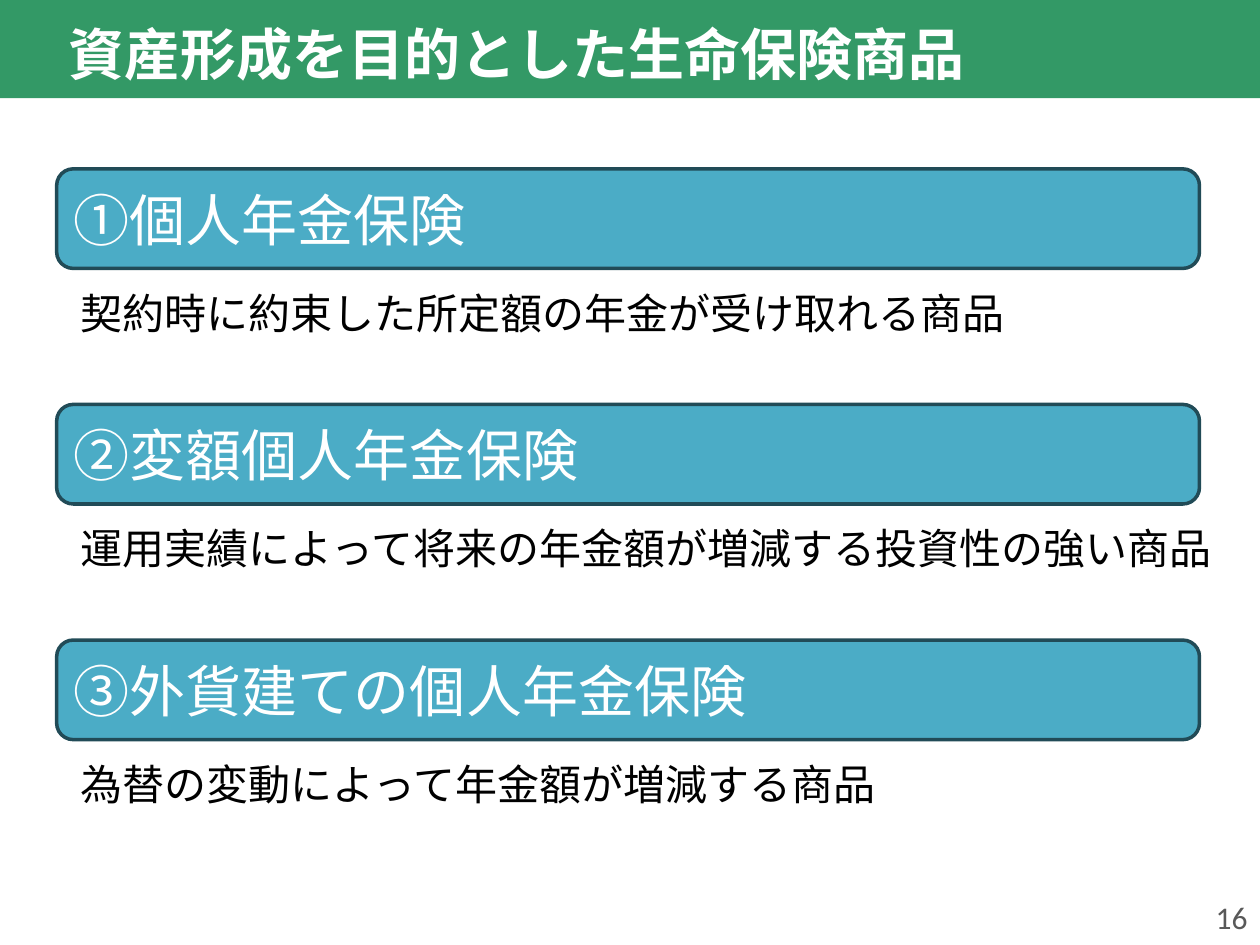
from lxml import etree
from pptx import Presentation
from pptx import util as u
from pptx.dml.color import RGBColor
from pptx.enum import shapes, text
from pptx.oxml.ns import qn

COLORS = {
    "header": "339966",
    "bar": "4BACC6",
    "outline": "214B57",
    "white": "FFFFFF",
    "black": "000000",
    "grey": "595959",
}
JP_FONT = "Noto Sans CJK JP"
PRODUCTS = [
    ("①個人年金保険", "契約時に約束した所定額の年金が受け取れる商品"),
    ("②変額個人年金保険", "運用実績によって将来の年金額が増減する投資性の強い商品"),
    ("③外貨建ての個人年金保険", "為替の変動によって年金額が増減する商品"),
]


def rgb(name):
    """Return the named palette colour."""
    return RGBColor.from_string(COLORS[name])


def place(sp, left, top, width, height):
    """Move and size a shape, in inches."""
    sp.left, sp.top = u.Inches(left), u.Inches(top)
    sp.width, sp.height = u.Inches(width), u.Inches(height)


def write(sp, content, size, color, font=JP_FONT, bold=False,
          align=text.PP_ALIGN.LEFT, anchor=text.MSO_ANCHOR.MIDDLE,
          fit=text.MSO_AUTO_SIZE.NONE, wrap=True):
    """Put one formatted paragraph into a shape."""
    tf = sp.text_frame
    tf.word_wrap, tf.auto_size, tf.vertical_anchor = wrap, fit, anchor
    p = tf.paragraphs[0]
    p.alignment = align
    r = p.add_run()
    r.text = content
    r.font.size, r.font.bold, r.font.name = u.Pt(size), bold, font
    r.font.color.rgb = rgb(color)
    etree.SubElement(r.font._element, qn("a:ea"), typeface=font)


def add_header(s, content, left, top, width, height):
    """Turn the title placeholder into the header band."""
    sp = s.shapes.title
    place(sp, left, top, width, height)
    sp.fill.solid()
    sp.fill.fore_color.rgb = rgb("header")
    write(sp, content, 32, "white", bold=True)
    tf = sp.text_frame
    tf.margin_left, tf.margin_right = u.Inches(0.54), u.Inches(0.1)
    tf.margin_top, tf.margin_bottom = u.Inches(0.12), u.Inches(0.05)


def add_product(s, name, description, left, top, width, height):
    """Add a product bar with its description below."""
    sp = s.shapes.add_shape(shapes.MSO_SHAPE.ROUNDED_RECTANGLE, 0, 0, 0, 0)
    place(sp, left, top, width, height)
    sp.shadow.inherit = False
    sp.fill.solid()
    sp.fill.fore_color.rgb = rgb("bar")
    sp.line.color.rgb = rgb("outline")
    sp.line.width = u.Pt(2)
    write(sp, name, 32, "white")
    box = s.shapes.add_textbox(0, 0, 0, 0)
    place(box, left + 0.09, top + height + 0.1, width + 0.84, 0.5)
    write(box, description, 24, "black", anchor=text.MSO_ANCHOR.TOP,
          fit=text.MSO_AUTO_SIZE.SHAPE_TO_FIT_TEXT)


def add_page_number(s, number, left, top, width, height):
    """Add the page number at the right edge of its box."""
    box = s.shapes.add_textbox(0, 0, 0, 0)
    place(box, left, top, width, height)
    write(box, number, 18, "grey", font="Calibri", align=text.PP_ALIGN.RIGHT)


def main():
    """Build the slide and save it."""
    prs = Presentation()
    prs.slide_width, prs.slide_height = u.Inches(10), u.Inches(7.5)
    s = prs.slides.add_slide(prs.slide_layouts[5])
    add_header(s, "資産形成を目的とした生命保険商品", 0, 0, 10, 0.78)
    for i, (name, description) in enumerate(PRODUCTS):
        add_product(s, name, description, 0.45, 1.34 + 1.87 * i, 9.07, 0.79)
    add_page_number(s, "16", 7.67, 7.08, 2.33, 0.4)
    prs.save("out.pptx")


if __name__ == "__main__":
    main()
